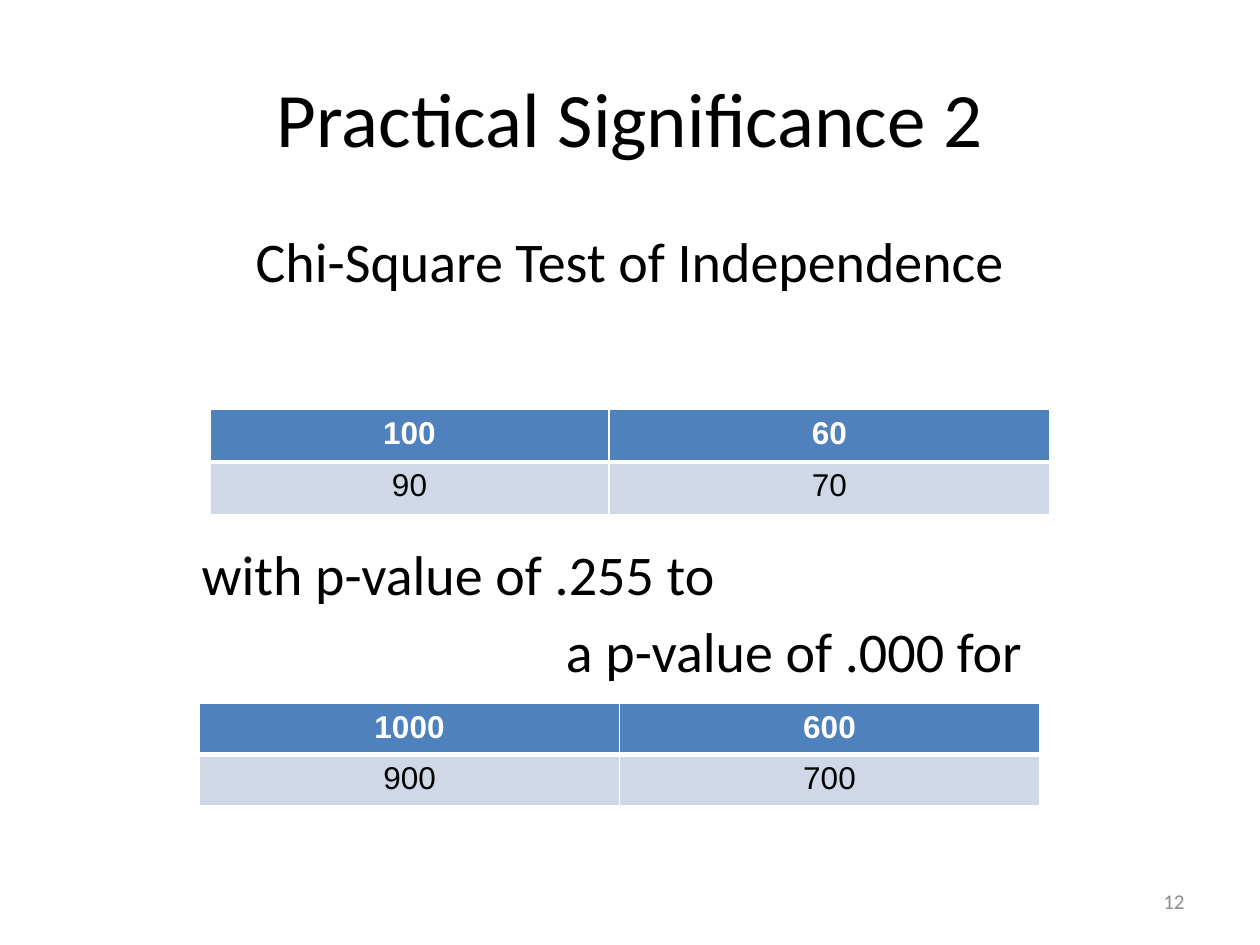
from dataclasses import dataclass

from lxml.etree import SubElement
from pptx import Presentation
from pptx.dml.color import RGBColor
from pptx.enum.text import MSO_ANCHOR, MSO_AUTO_SIZE, PP_ALIGN
from pptx.oxml.ns import qn
from pptx.util import Inches, Pt

COLUMNS, ROWS = 120, 90


@dataclass(frozen=True)
class Theme:
    text_font: str = "Calibri"
    table_font: str = "Arial"
    title_size: float = 44
    body_size: float = 32
    table_size: float = 18
    number_size: float = 12
    black: str = "000000"
    white: str = "FFFFFF"
    grey: str = "8C8C8C"
    header_fill: str = "4F81BD"
    body_fill: str = "D0D8E8"
    thin_line: float = 1
    thick_line: float = 3


def write(paragraph, text, *, font, size, color, bold=False,
          align=PP_ALIGN.LEFT, space_before=0):
    paragraph.alignment = align
    paragraph.space_before = Pt(space_before)
    run = paragraph.add_run()
    run.text = text
    run.font.name = font
    run.font.size = Pt(size)
    run.font.bold = bold
    run.font.color.rgb = RGBColor.from_string(color)


def remove_bullet(paragraph, indent):
    """Drop the bullet and start the lines at the given left indent."""
    properties = paragraph._p.get_or_add_pPr()
    properties.set("marL", str(indent))
    properties.set("indent", "0")
    SubElement(properties, qn("a:buNone"))


def draw_borders(cell, color, widths):
    """Set borders from widths in points, keyed L, R, T, B in that order."""
    properties = cell._tc.get_or_add_tcPr()
    for side, width in widths.items():
        line = SubElement(properties, qn(f"a:ln{side}"), w=str(Pt(width)))
        fill = SubElement(line, qn("a:solidFill"))
        SubElement(fill, qn("a:srgbClr"), val=color)


class SlideBuilder:
    def __init__(self, presentation, theme):
        self.theme = theme
        self.column = presentation.slide_width / COLUMNS
        self.row = presentation.slide_height / ROWS
        self.slide = presentation.slides.add_slide(presentation.slide_layouts[1])

    def area(self, left, top, width, height):
        """Turn grid columns and rows into slide lengths."""
        return (round(left * self.column), round(top * self.row),
                round(width * self.column), round(height * self.row))

    def place(self, shape, area):
        shape.left, shape.top, shape.width, shape.height = self.area(*area)
        shape.text_frame.word_wrap = True
        shape.text_frame.auto_size = MSO_AUTO_SIZE.NONE

    def title(self, text, area):
        shape = self.slide.shapes.title
        self.place(shape, area)
        shape.text_frame.vertical_anchor = MSO_ANCHOR.MIDDLE
        write(shape.text_frame.paragraphs[0], text, font=self.theme.text_font,
              size=self.theme.title_size, color=self.theme.black,
              align=PP_ALIGN.CENTER)

    def body(self, lines, area):
        """Write lines of (text, alignment, indent in columns, space before)."""
        shape = self.slide.placeholders[1]
        self.place(shape, area)
        frame = shape.text_frame
        for index, (text, align, indent, space_before) in enumerate(lines):
            paragraph = frame.add_paragraph() if index else frame.paragraphs[0]
            write(paragraph, text, font=self.theme.text_font,
                  size=self.theme.body_size, color=self.theme.black,
                  align=align, space_before=space_before)
            remove_bullet(paragraph, round(indent * self.column))

    def page_number(self, text, area):
        shape = self.slide.shapes.add_textbox(*self.area(*area))
        self.place(shape, area)
        shape.text_frame.vertical_anchor = MSO_ANCHOR.MIDDLE
        write(shape.text_frame.paragraphs[0], text, font=self.theme.text_font,
              size=self.theme.number_size, color=self.theme.grey,
              align=PP_ALIGN.RIGHT)

    def table(self, values, area, column_widths):
        theme = self.theme
        table = self.slide.shapes.add_table(
            len(values), len(column_widths), *self.area(*area)).table
        for column, width in zip(table.columns, column_widths):
            column.width = round(width * self.column)
        for row_index, row in enumerate(values):
            header = row_index == 0
            top, bottom = theme.thick_line, theme.thin_line
            if header:
                top, bottom = bottom, top
            for column_index, value in enumerate(row):
                cell = table.cell(row_index, column_index)
                draw_borders(cell, theme.white, {
                    "L": theme.thin_line, "R": theme.thin_line,
                    "T": top, "B": bottom})
                cell.fill.solid()
                cell.fill.fore_color.rgb = RGBColor.from_string(
                    theme.header_fill if header else theme.body_fill)
                write(cell.text_frame.paragraphs[0], str(value),
                      font=theme.table_font, size=theme.table_size,
                      color=theme.white if header else theme.black,
                      bold=header, align=PP_ALIGN.CENTER)


def main():
    presentation = Presentation()
    presentation.slide_width, presentation.slide_height = Inches(10), Inches(7.5)
    builder = SlideBuilder(presentation, Theme())
    builder.title("Practical Significance 2", (6, 3.6, 108, 15))
    builder.body([
        ("Chi-Square Test of Independence", PP_ALIGN.CENTER, 0, 6),
        ("with p-value of .255 to", PP_ALIGN.LEFT, 12, 140),
        ("a p-value of .000 for", PP_ALIGN.LEFT, 46.7, 6),
    ], (6, 21, 108, 59.4))
    builder.page_number("12", (86, 83.4, 28, 4.8))
    builder.table([(1000, 600), (900, 700)], (19, 67, 80, 9.7), (40, 40))
    builder.table([(100, 60), (90, 70)], (20, 39, 80, 10), (38, 42))
    presentation.save("out.pptx")


if __name__ == "__main__":
    main()
